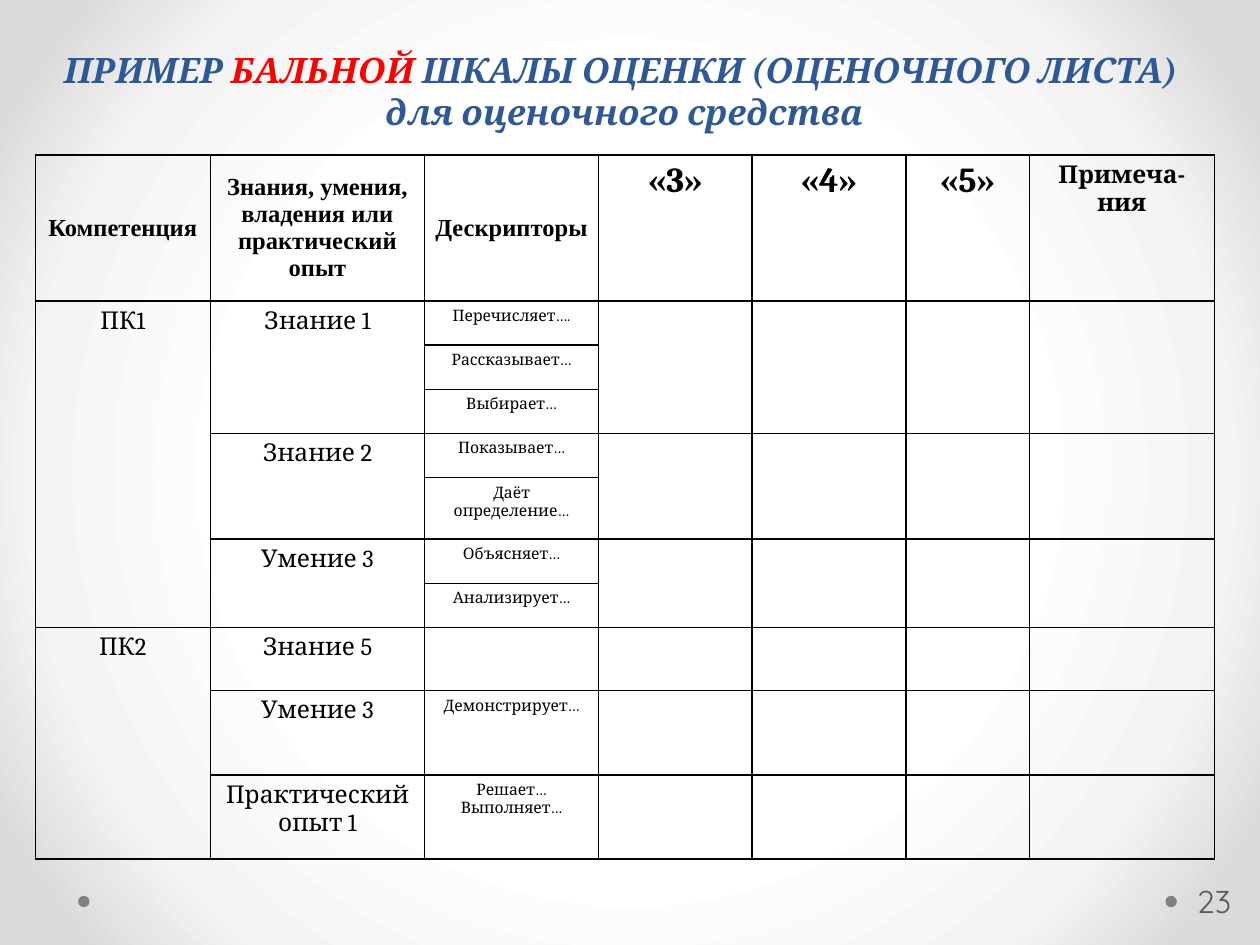
import pptx
import pptx.util
import pptx.dml.color
import pptx.enum.shapes
import pptx.enum.text
import pptx.oxml
import pptx.oxml.ns

HUES = {"blue": "2F5897", "red": "FF0000", "black": "000000", "dot": "808080", "page": "595959"}
GLOW = [(50, "FFFFFF"), (76, "F4F4F4"), (92, "DADADA")]
SPACE = pptx.oxml.ns.nsdecls("a")
ALIGN = pptx.enum.text.PP_ALIGN
ANCHOR = pptx.enum.text.MSO_ANCHOR

# Font formats
TITLE = {"name": "Cambria", "size": 20, "bold": True, "italic": True}
HEAD = {"name": "Times New Roman", "size": 14, "bold": True}
MARK = {"name": "Cambria", "size": 20, "bold": True}
NOTE = {"name": "Cambria", "size": 14, "bold": True}
BODY = {"name": "Cambria", "size": 14, "bold": False}
SMALL = {"name": "Cambria", "size": 9, "bold": False}
PAGE = {"name": "Quicksand", "size": 18}

# Table content: competence, then each skill with its descriptors
HEADS = [
    ("Компетенция", HEAD), ("Знания, умения, владения или практический опыт", HEAD),
    ("Дескрипторы", HEAD), ("«3»", MARK), ("«4»", MARK), ("«5»", MARK), ("Примеча-ния", NOTE),
]
GROUPS = [
    ("ПК1", [
        ("Знание 1", ["Перечисляет….", "Рассказывает…", "Выбирает…"]),
        ("Знание 2", ["Показывает…", "Даёт определение…"]),
        ("Умение 3", ["Объясняет…", "Анализирует…"]),
    ]),
    ("ПК2", [
        ("Знание 5", [""]),
        ("Умение 3", ["Демонстрирует…"]),
        ("Практический опыт 1", ["Решает…\nВыполняет…"]),
    ]),
]
COLS = [13.9, 17, 13.8, 12.2, 12.2, 9.8, 14.7]
ROWS = [11.6, 3.5, 3.5, 3.5, 3.5, 4.9, 3.5, 3.5, 5, 6.7, 6.7]


class Deck:
    """Places elements on a grid of 100 columns by 75 rows."""

    def __init__(self):
        self.file = pptx.Presentation()
        self.file.slide_width = pptx.util.Inches(10)
        self.file.slide_height = pptx.util.Inches(7.5)
        self.unit = self.file.slide_width // 100
        self.slide = self.file.slides.add_slide(self.file.slide_layouts[5])

    def span(self, *sizes):
        return [round(size * self.unit) for size in sizes]

    def style(self, font, form, hue="black"):
        for key, val in form.items():
            setattr(font, key, pptx.util.Pt(val) if key == "size" else val)
        font.color.rgb = pptx.dml.color.RGBColor.from_string(HUES[hue])

    def back(self, stops):
        self.slide.background.fill.gradient()
        marks = "".join(f'<a:gs pos="{pos * 1000}"><a:srgbClr val="{hue}"/></a:gs>'
                        for pos, hue in stops)
        glow = pptx.oxml.parse_xml(
            f'<a:gradFill {SPACE} rotWithShape="1"><a:gsLst>{marks}</a:gsLst>'
            '<a:path path="circle"><a:fillToRect l="50000" t="50000" r="50000" b="50000"/>'
            '</a:path></a:gradFill>')
        props = self.slide.element.cSld.bg.bgPr
        props.replace(props.find(pptx.oxml.ns.qn("a:gradFill")), glow)

    def dot(self, left, top, size):
        kind = pptx.enum.shapes.MSO_SHAPE.OVAL
        shape = self.slide.shapes.add_shape(kind, *self.span(left, top, size, size))
        shape.shadow.inherit = False
        shape.fill.solid()
        shape.fill.fore_color.rgb = pptx.dml.color.RGBColor.from_string(HUES["dot"])
        shape.line.fill.background()

    def title(self, box, lines):
        shape = self.slide.shapes.title
        shape.left, shape.top, shape.width, shape.height = self.span(*box)
        frame = shape.text_frame
        frame.auto_size = pptx.enum.text.MSO_AUTO_SIZE.NONE
        frame.vertical_anchor = ANCHOR.BOTTOM
        para = frame.paragraphs[0]
        para.alignment = ALIGN.CENTER
        for row, line in enumerate(lines):
            if row:
                para.add_line_break()
            for text, hue in line:
                run = para.add_run()
                run.text = text
                self.style(run.font, TITLE, hue)

    def label(self, box, text, form, hue):
        frame = self.slide.shapes.add_textbox(*self.span(*box)).text_frame
        frame.word_wrap = True
        frame.vertical_anchor = ANCHOR.MIDDLE
        frame.margin_left, frame.margin_right = self.span(0.3, 0.5)
        self.put(frame, text, form, hue)

    def put(self, frame, text, form, hue="black"):
        frame.text = text
        for para in frame.paragraphs:
            para.alignment = ALIGN.CENTER
            self.style(para.font, form, hue)
            for run in para.runs:
                self.style(run.font, form, hue)

    def grid(self, left, top, cols, rows):
        box = self.span(left, top, sum(cols), sum(rows))
        table = self.slide.shapes.add_table(len(rows), len(cols), *box).table
        table.first_row = table.horz_banding = False
        for col, width in zip(table.columns, self.span(*cols)):
            col.width = width
        for row, height in zip(table.rows, self.span(*rows)):
            row.height = height
        for cell in table.iter_cells():
            self.edge(cell)
            cell.fill.background()
            self.put(cell.text_frame, "", SMALL)
        return table

    def edge(self, cell):
        props = cell._tc.get_or_add_tcPr()
        for side in ("lnL", "lnR", "lnT", "lnB"):
            props.append(pptx.oxml.parse_xml(
                f'<a:{side} {SPACE} w="12700"><a:solidFill>'
                f'<a:srgbClr val="{HUES["black"]}"/></a:solidFill></a:{side}>'))

    def block(self, table, row, col, count, text="", form=BODY):
        cell = table.cell(row, col)
        if count > 1:
            cell.merge(table.cell(row + count - 1, col))
        if text:
            self.put(cell.text_frame, text, form)
        return cell


def main():
    deck = Deck()
    deck.back(GLOW)

    # Footer dots and heading
    for left in (92.5, 6.2):
        deck.dot(left, 71.1, 0.9)
    deck.title((3.5, 2.1, 92.1, 8.9), [
        [("ПРИМЕР ", "blue"), ("БАЛЬНОЙ", "red"),
         (" ШКАЛЫ ОЦЕНКИ (ОЦЕНОЧНОГО ЛИСТА) ", "blue")],
        [("для оценочного средства", "blue")],
    ])

    # Header row
    table = deck.grid(2.8, 12.3, COLS, ROWS)
    for col, (text, form) in enumerate(HEADS):
        cell = deck.block(table, 0, col, 1, text, form)
        if form is HEAD:
            cell.vertical_anchor = ANCHOR.MIDDLE
            cell.margin_left, cell.margin_right = deck.span(0.7, 0.7)
            cell.margin_top = cell.margin_bottom = 0

    # Competences, skills and descriptors
    row = 1
    for code, skills in GROUPS:
        deck.block(table, row, 0, sum(len(signs) for _, signs in skills), code)
        for skill, signs in skills:
            deck.block(table, row, 1, len(signs), skill)
            for step, sign in enumerate(signs):
                deck.block(table, row + step, 2, 1, sign, SMALL)
            for col in range(3, len(COLS)):
                deck.block(table, row, col, len(signs))
            row += len(signs)

    # Page number
    deck.label((93.4, 69.5, 6.1, 4), "23", PAGE, "page")
    deck.file.save("out.pptx")


if __name__ == "__main__":
    main()
